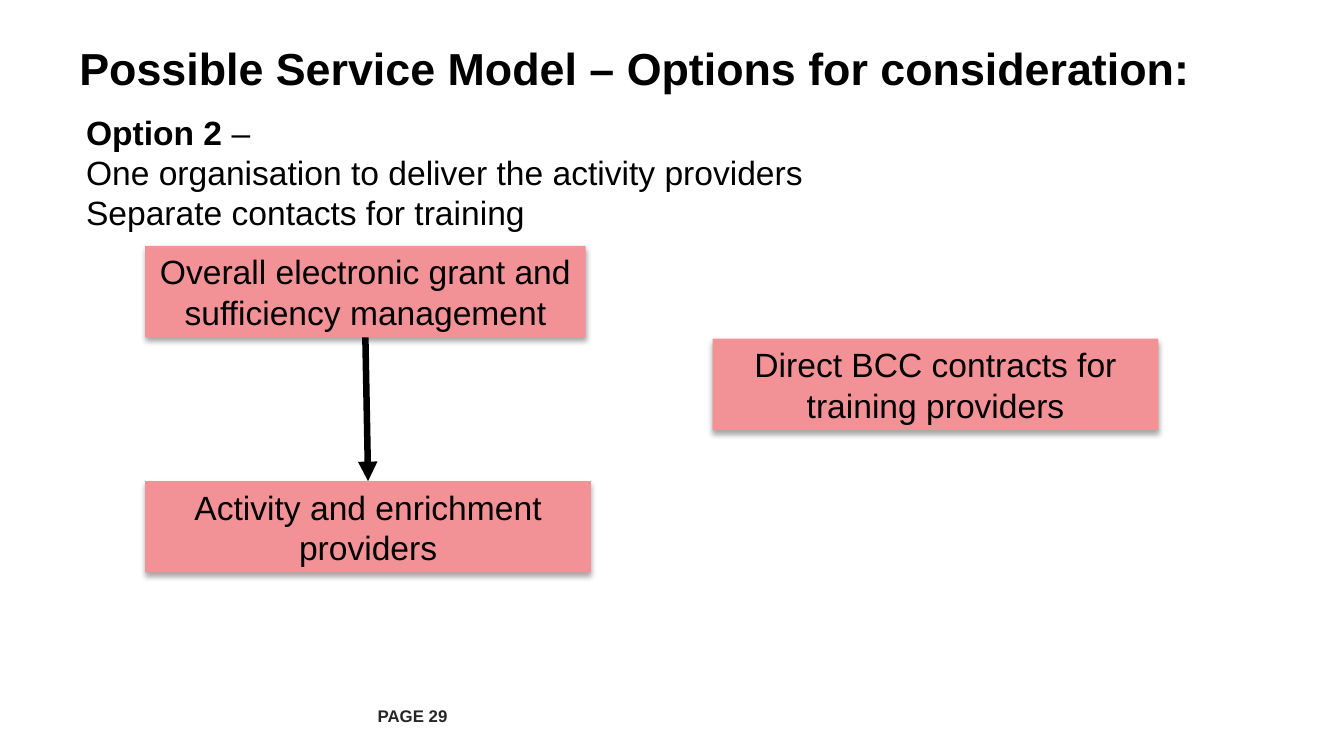
from dataclasses import dataclass

from lxml import etree
from pptx import Presentation
from pptx import util as u
from pptx.dml.color import RGBColor
from pptx.enum import shapes, text
from pptx.oxml.ns import qn


@dataclass(frozen=True)
class Theme:
    """Colours, font and type sizes of the slide."""
    font: str = "Arial"
    ink: str = "000000"
    footer_ink: str = "262626"
    box_fill: str = "F39296"
    title_size: int = 24
    body_size: int = 18
    footer_size: int = 9
    arrow_width: float = 3.5


THEME = Theme()
WIDTH = 10
HEIGHT = WIDTH * 9 / 16
BOX_HEIGHT = 0.68


def place(shape, box):
    """Put a shape at a left, top, width, height box in inches."""
    shape.left, shape.top, shape.width, shape.height = map(u.Inches, box)


def child(parent, tag, **attributes):
    """Append a DrawingML element and return it."""
    return etree.SubElement(parent, qn(tag), attributes)


def write(shape, paragraphs, size=THEME.body_size, color=THEME.ink, bold=False,
          align=text.PP_ALIGN.LEFT, anchor=text.MSO_ANCHOR.TOP, insets=(0.1, 0.05)):
    """Fill a shape with paragraphs of plain strings or (string, bold) runs."""
    frame = shape.text_frame
    frame.word_wrap = True
    frame.auto_size = text.MSO_AUTO_SIZE.NONE
    frame.vertical_anchor = anchor
    frame.margin_left = frame.margin_right = u.Inches(insets[0])
    frame.margin_top = frame.margin_bottom = u.Inches(insets[1])
    for index, content in enumerate(paragraphs):
        paragraph = frame.paragraphs[0] if index == 0 else frame.add_paragraph()
        properties = paragraph._p.get_or_add_pPr()
        properties.set("marL", "0")
        properties.set("indent", "0")
        child(properties, "a:buNone")
        paragraph.alignment = align
        paragraph.space_before = u.Pt(0)
        runs = [(content, bold)] if isinstance(content, str) else content
        for words, heavy in runs:
            run = paragraph.add_run()
            run.text = words
            run.font.name, run.font.size, run.font.bold = THEME.font, u.Pt(size), heavy
            run.font.color.rgb = RGBColor.from_string(color)


def add_box(slide, label, left, top, width):
    """Add a service box with a soft shadow below it."""
    service = slide.shapes.add_shape(shapes.MSO_SHAPE.RECTANGLE, 0, 0, 0, 0)
    place(service, (left, top, width, BOX_HEIGHT))
    service.fill.solid()
    service.fill.fore_color.rgb = RGBColor.from_string(THEME.box_fill)
    service.line.fill.background()
    effects = child(service._element.spPr, "a:effectLst")
    shadow = child(effects, "a:outerShdw", blurRad=str(u.Pt(3.1)), dist=str(u.Pt(1.8)),
                   dir="5400000", rotWithShape="0")
    child(child(shadow, "a:srgbClr", val=THEME.ink), "a:alpha", val="35000")
    write(service, [label], align=text.PP_ALIGN.CENTER, insets=(0.07, 0.04))
    return service


def add_arrow(slide, source, target):
    """Join the bottom of one box to the top of another with an arrow."""
    arrow = slide.shapes.add_connector(shapes.MSO_CONNECTOR.STRAIGHT, 0, 0, 0, 0)
    arrow.begin_connect(source, 2)
    arrow.end_connect(target, 0)
    arrow.line.color.rgb = RGBColor.from_string(THEME.ink)
    arrow.line.width = u.Pt(THEME.arrow_width)
    child(arrow.line._get_or_add_ln(), "a:tailEnd", type="triangle")
    child(arrow._element.spPr, "a:effectLst")


def add_heading(slide, box):
    """Set the slide title."""
    place(slide.shapes.title, box)
    write(slide.shapes.title, ["Possible Service Model – Options for consideration:"],
          size=THEME.title_size, bold=True, anchor=text.MSO_ANCHOR.MIDDLE, insets=(0.09, 0.04))


def add_option(slide, box):
    """Describe the option in the body placeholder."""
    option = slide.placeholders[1]
    place(option, box)
    write(option, [[("Option 2 ", True), ("–", False)],
                   "One organisation to deliver the activity providers",
                   "Separate contacts for training"])


def add_model(slide, box):
    """Draw the grant chain on the left and the direct contracts on the right."""
    left, top, width, height = box
    column = 0.44 * width
    management = add_box(slide, "Overall electronic grant and sufficiency management",
                         left, top, column - 0.04)
    activities = add_box(slide, "Activity and enrichment providers",
                         left, top + height - BOX_HEIGHT, column)
    add_box(slide, "Direct BCC contracts for training providers",
            left + width - column, top + 0.69, column)
    add_arrow(slide, management, activities)


def add_footer(slide, box):
    """Add the page label."""
    page = slide.shapes.add_textbox(0, 0, 0, 0)
    place(page, box)
    write(page, ["PAGE 29"], size=THEME.footer_size, color=THEME.footer_ink, bold=True,
          anchor=text.MSO_ANCHOR.MIDDLE, insets=(0.09, 0.04))


def main():
    """Build and save the slide."""
    deck = Presentation()
    deck.slide_width, deck.slide_height = u.Inches(WIDTH), u.Inches(HEIGHT)
    slide = deck.slides.add_slide(deck.slide_layouts[1])
    margin = 0.05 * WIDTH
    add_footer(slide, (2.72, 0.92 * HEIGHT, 0.87, 0.3))
    add_heading(slide, (margin, 0.23, WIDTH - 2 * margin, 0.55))
    add_model(slide, (1.08, 1.83, 7.54, 2.43))
    add_option(slide, (0.54, 0.78, 8.89, 1.01))
    deck.save("out.pptx")


if __name__ == "__main__":
    main()
